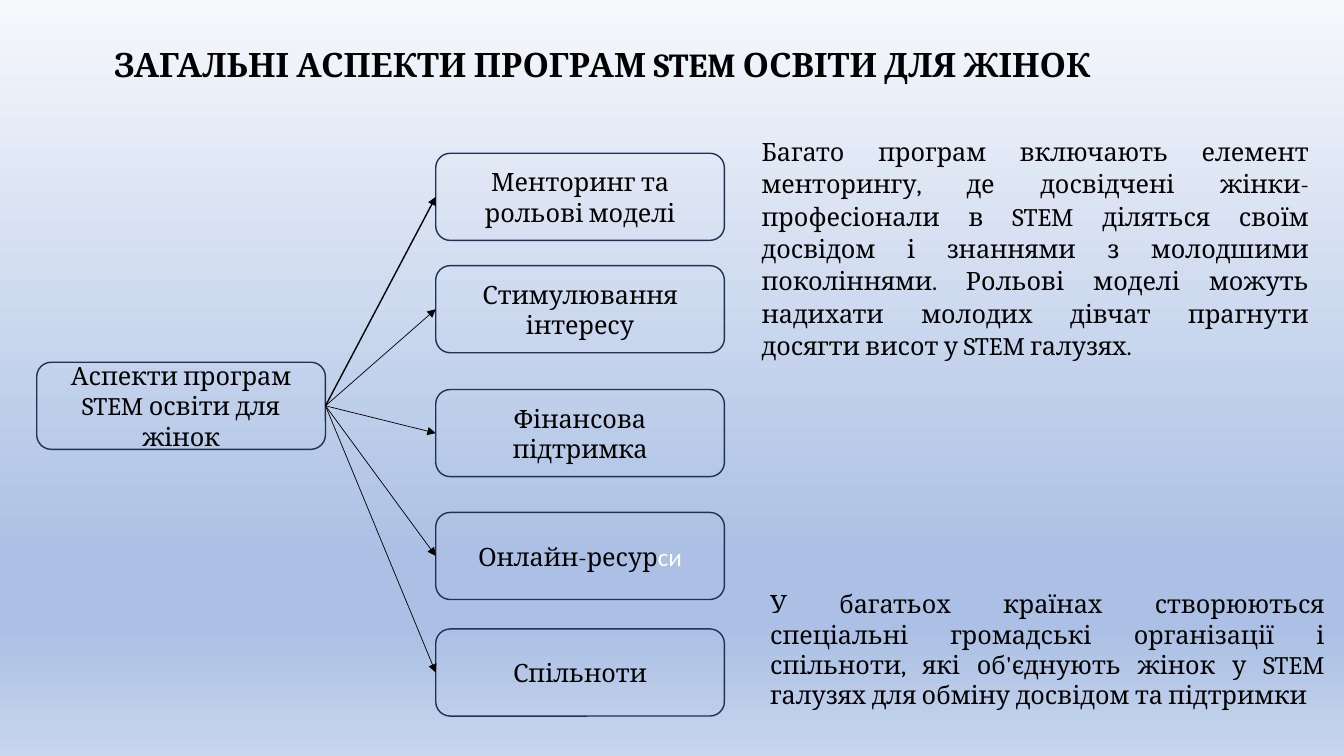
from lxml.etree import SubElement
from pptx import Presentation
from pptx.dml.color import RGBColor
from pptx.enum.shapes import MSO_CONNECTOR, MSO_SHAPE
from pptx.enum.text import MSO_ANCHOR, MSO_AUTO_SIZE, PP_ALIGN
from pptx.oxml.ns import qn
from pptx.util import Pt

PX = 9525  # EMU in one px, 96 px to the inch
COLORS = {"text": "000000", "light": "FFFFFF", "outline": "1E3256"}
BACKGROUND_STOPS = [(0, "F6F8FC"), (74, "ABC0E4"), (83, "ABC0E4"), (100, "C7D5ED")]

TITLE = "ЗАГАЛЬНІ АСПЕКТИ ПРОГРАМ STEM ОСВІТИ ДЛЯ ЖІНОК"
ROOT = "Аспекти програм STEM освіти для жінок"
# Label, its differently styled ending, top within the diagram, arrow width
BRANCHES = [
    ("Менторинг та рольові моделі", "", 0, 1),
    ("Стимулювання інтересу", "", 107, 0.5),
    ("Фінансова підтримка", "", 225, 0.5),
    ("Онлайн-ресур", "си", 342, 0.5),
    ("Спільноти", "", 453, 0.5),
]
MENTORING = (
    "Багато програм включають елемент менторингу, де досвідчені "
    "жінки-професіонали в STEM діляться своїм досвідом і знаннями з молодшими "
    "поколіннями. Рольові моделі можуть надихати молодих дівчат прагнути "
    "досягти висот у STEM галузях."
)
COMMUNITIES = (
    "У багатьох країнах створюються спеціальні громадські організації і "
    "спільноти, які об'єднують жінок у STEM галузях для обміну досвідом та підтримки"
)
NODE_WIDTH, NODE_HEIGHT = 275, 83


def emu(*lengths):
    return [length * PX for length in lengths]


def rgb(name):
    return RGBColor.from_string(COLORS[name])


def add_text(paragraph, text, size=18, font="Cambria", color="text", bold=False):
    run = paragraph.add_run()
    run.text = text
    run.font.size = Pt(size)
    run.font.name = font
    run.font.bold = bold
    run.font.color.rgb = rgb(color)


def paint_background(slide):
    fill = slide.background.fill
    fill.gradient()
    fill.gradient_angle = 270
    stops = next(slide.element.iter(qn("a:gsLst")))
    for stop in list(stops):
        stops.remove(stop)
    for position, color in BACKGROUND_STOPS:
        stop = SubElement(stops, qn("a:gs"), pos=str(position * 1000))
        SubElement(stop, qn("a:srgbClr"), val=color)


def add_text_box(slide, box, text, align=PP_ALIGN.LEFT, anchor=MSO_ANCHOR.TOP,
                 grow=True, line_spacing=1.0, space_after=0, **font_format):
    frame = slide.shapes.add_textbox(*emu(*box)).text_frame
    frame.word_wrap = True
    frame.auto_size = MSO_AUTO_SIZE.SHAPE_TO_FIT_TEXT if grow else MSO_AUTO_SIZE.NONE
    frame.vertical_anchor = anchor
    paragraph = frame.paragraphs[0]
    paragraph.alignment = align
    paragraph.line_spacing = line_spacing
    paragraph.space_after = Pt(space_after)
    add_text(paragraph, text, **font_format)


def add_node(slide, left, top, text, ending=""):
    shape = slide.shapes.add_shape(
        MSO_SHAPE.ROUNDED_RECTANGLE, *emu(left, top, NODE_WIDTH, NODE_HEIGHT))
    shape.shadow.inherit = False
    shape.fill.background()
    shape.line.color.rgb = rgb("outline")
    shape.line.width = Pt(1)
    frame = shape.text_frame
    frame.word_wrap = True
    frame.vertical_anchor = MSO_ANCHOR.MIDDLE
    paragraph = frame.paragraphs[0]
    paragraph.alignment = PP_ALIGN.CENTER
    add_text(paragraph, text)
    if ending:
        add_text(paragraph, ending, font="Calibri", color="light")
    return shape


def add_arrow(slide, source, target, width):
    connector = slide.shapes.add_connector(MSO_CONNECTOR.STRAIGHT, 0, 0, 0, 0)
    connector.begin_connect(source, 3)
    connector.end_connect(target, 1)
    connector.line.color.rgb = rgb("text")
    connector.line.width = Pt(width)
    SubElement(connector.line._get_or_add_ln(), qn("a:tailEnd"), type="triangle")
    SubElement(connector.element.spPr, qn("a:effectLst"))


def add_diagram(slide, box):
    left, top, width, height = box
    root = add_node(slide, left, top + 199, ROOT)
    for label, ending, offset, arrow_width in BRANCHES:
        branch = add_node(slide, left + width - NODE_WIDTH, top + offset, label, ending)
        add_arrow(slide, root, branch, arrow_width)


def add_explanations(slide, box):
    left, top, width, height = box
    add_text_box(slide, (left, top, width - 15, 194), MENTORING,
                 align=PP_ALIGN.JUSTIFY, line_spacing=1.07, space_after=8)
    add_text_box(slide, (left + 8, top + height - 126, width - 8, 126), COMMUNITIES,
                 align=PP_ALIGN.JUSTIFY)


def main():
    presentation = Presentation()
    presentation.slide_width, presentation.slide_height = emu(1280, 720)
    slide = presentation.slides.add_slide(presentation.slide_layouts[6])
    paint_background(slide)
    # Title
    add_text_box(slide, (99, -6, 1104, 139), TITLE, anchor=MSO_ANCHOR.MIDDLE,
                 grow=False, line_spacing=0.9, size=24, bold=True)
    # Root and its branches on the left, explanations on the right
    add_diagram(slide, (35, 146, 655, 536))
    add_explanations(slide, (716, 123, 555, 559))
    presentation.save("out.pptx")


if __name__ == "__main__":
    main()
